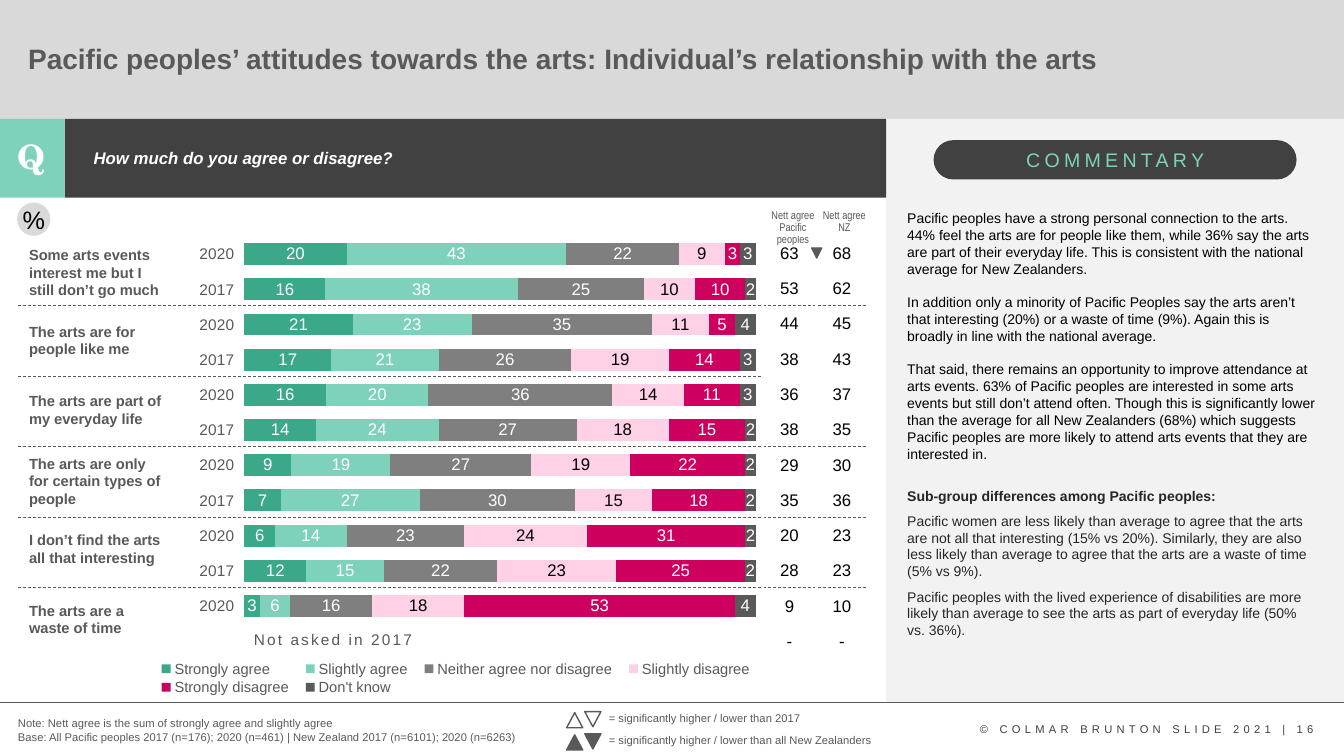
from dataclasses import dataclass
from lxml.etree import SubElement
from pptx import Presentation
from pptx.chart.data import CategoryChartData
from pptx.dml.color import RGBColor
from pptx.enum.chart import XL_CHART_TYPE, XL_LEGEND_POSITION, XL_TICK_MARK
from pptx.enum.dml import MSO_LINE
from pptx.enum.shapes import MSO_CONNECTOR, MSO_SHAPE
from pptx.enum.text import MSO_ANCHOR, PP_ALIGN
from pptx.oxml import parse_xml
from pptx.oxml.ns import nsdecls, qn
from pptx.util import Emu, Pt


@dataclass(frozen=True)
class Theme:
    """Colours, fonts and type sizes of the slide."""
    white: str = "FFFFFF"
    black: str = "000000"
    ink: str = "262626"
    footer: str = "404040"
    dark: str = "414141"
    grey: str = "595959"
    mid: str = "7F7F7F"
    band: str = "D9D9D9"
    panel: str = "F2F2F2"
    green: str = "3AA889"
    mint: str = "7ED2BB"
    pink: str = "FFD1E6"
    magenta: str = "CD005F"
    font: str = "Arial"
    narrow: str = "Arial Narrow"
    serif: str = "TeX Gyre Schola"
    small: float = 8
    body: float = 10
    label: float = 10.5
    axis: float = 11
    value: float = 12
    pill: float = 14
    sign: float = 18
    title: float = 20
    mark: float = 24


T = Theme()
PX = 9144
CENTER = PP_ALIGN.CENTER


def px(n):
    """Turn px into EMU."""
    return Emu(n * PX)


def style(font, size, color, name=T.font):
    """Set the size, colour and typeface of a font."""
    font.size = Pt(size)
    font.name = name
    font.color.rgb = RGBColor.from_string(color)


def write(p, text, size=T.label, color=T.grey, name=T.font, bold=False,
          italic=False, align=None, spc=0, line=None, before=None):
    """Write one formatted run into a paragraph."""
    r = p.add_run()
    r.text = text
    style(r.font, size, color, name)
    r.font.bold, r.font.italic = bold, italic
    if spc:
        r.font._element.set("spc", str(spc))
    if align is not None:
        p.alignment = align
    if line:
        p.line_spacing = line
    if before:
        p.space_before = Pt(before)


def place(parent, index, box, **tags):
    """Give a chart part a manual layout in fractions of the chart."""
    for old in parent.findall(qn("c:layout")):
        parent.remove(old)
    lay = SubElement(parent, qn("c:layout"))
    man = SubElement(lay, qn("c:manualLayout"))
    tags.update(xMode="edge", yMode="edge", **dict(zip("xywh", box)))
    for tag, val in tags.items():
        SubElement(man, qn(f"c:{tag}")).set("val", str(val))
    parent.insert(index, lay)


class Slide:
    """The current slide and its element builders."""

    def __init__(self, prs, theme):
        """Add a blank slide."""
        self.s = prs.slides.add_slide(prs.slide_layouts[6])
        self.t = theme

    def shape(self, x, y, w, h, fill, kind=MSO_SHAPE.RECTANGLE, line=None, turn=0):
        """Add a filled preset shape."""
        sp = self.s.shapes.add_shape(kind, px(x), px(y), px(w), px(h))
        sp.shadow.inherit = False
        sp.fill.solid()
        sp.fill.fore_color.rgb = RGBColor.from_string(fill)
        if line:
            sp.line.color.rgb = RGBColor.from_string(line)
            sp.line.width = Pt(1)
        else:
            sp.line.fill.background()
        sp.rotation = turn
        return sp

    def text(self, x, y, w, h, *paras, wrap=True, anchor=MSO_ANCHOR.TOP, **fmt):
        """Add a text box; a paragraph is a string or a (string, format) pair."""
        tf = self.s.shapes.add_textbox(px(x), px(y), px(w), px(h)).text_frame
        tf.word_wrap = wrap
        tf.vertical_anchor = anchor
        for i, para in enumerate(paras):
            words, extra = (para, {}) if isinstance(para, str) else para
            p = tf.add_paragraph() if i else tf.paragraphs[0]
            write(p, words, **{**fmt, **extra})

    def rule(self, x1, x2, y, dash=False):
        """Add a thin horizontal line."""
        c = self.s.shapes.add_connector(MSO_CONNECTOR.STRAIGHT, px(x1), px(y), px(x2), px(y))
        c.line.color.rgb = RGBColor.from_string(self.t.grey)
        c.line.width = Pt(0.5)
        if dash:
            c.line.dash_style = MSO_LINE.DASH
        SubElement(c._element.spPr, qn("a:effectLst"))

    def table(self, x, y, col, row, rows):
        """Add a plain table of centred values."""
        n, m = len(rows), len(rows[0])
        tbl = self.s.shapes.add_table(n, m, px(x), px(y), px(col * m), px(row * n)).table
        tbl.first_row = tbl.horz_banding = False
        for i, values in enumerate(rows):
            for j, value in enumerate(values):
                cell = tbl.cell(i, j)
                cell.fill.background()
                cell.vertical_anchor = MSO_ANCHOR.MIDDLE
                write(cell.text_frame.paragraphs[0], value, size=self.t.value,
                      color=self.t.black, align=CENTER)

    def chart(self, x, y, w, h, cats, series, plot_box, legend_box):
        """Add a 100% stacked bar chart."""
        cd = CategoryChartData()
        cd.categories = cats
        for name, _, _, values in series:
            cd.add_series(name, values)
        ch = self.s.shapes.add_chart(XL_CHART_TYPE.BAR_STACKED_100, px(x), px(y),
                                     px(w), px(h), cd).chart
        style(ch.font, self.t.body, self.t.black)
        ch.has_title = False
        ch.has_legend = True
        ch.legend.position = XL_LEGEND_POSITION.BOTTOM
        ch.legend.include_in_layout = False
        style(ch.legend.font, self.t.label, self.t.grey)
        ax = ch.category_axis
        ax.format.line.fill.background()
        ax.major_tick_mark = XL_TICK_MARK.OUTSIDE
        style(ax.tick_labels.font, self.t.axis, self.t.grey)
        ch.value_axis.has_major_gridlines = False
        ch.value_axis.visible = False
        plot = ch.plots[0]
        plot.gap_width, plot.overlap = 60, 100
        for ser, (_, fill, ink, _) in zip(plot.series, series):
            ser.format.fill.solid()
            ser.format.fill.fore_color.rgb = RGBColor.from_string(fill)
            ser.data_labels.show_value = True
            style(ser.data_labels.font, self.t.value, ink)
        root = ch._chartSpace.find(qn("c:chart"))
        root.addnext(parse_xml(f'<c:spPr {nsdecls("c", "a")}><a:noFill/>'
                               '<a:ln><a:noFill/></a:ln></c:spPr>'))
        place(root.find(qn("c:plotArea")), 0, plot_box, layoutTarget="inner")
        place(root.find(qn("c:legend")), 1, legend_box)


SERIES = [
    ("Strongly agree", T.green, T.white, [None, 3, 12, 6, 7, 9, 14, 16, 17, 21, 16, 20]),
    ("Slightly agree", T.mint, T.white, [None, 6, 15, 14, 27, 19, 24, 20, 21, 23, 38, 43]),
    ("Neither agree nor disagree", T.mid, T.white,
     [None, 16, 22, 23, 30, 27, 27, 36, 26, 35, 25, 22]),
    ("Slightly disagree", T.pink, T.black, [None, 18, 23, 24, 15, 19, 18, 14, 19, 11, 10, 9]),
    ("Strongly disagree", T.magenta, T.white, [None, 53, 25, 31, 18, 22, 15, 11, 14, 5, 10, 3]),
    ("Don't know", T.grey, T.white, [None, 4, 2, 2, 2, 2, 2, 3, 3, 4, 2, 3]),
]
STATEMENTS = [
    (239, "Some arts events interest me but I still don’t go much"),
    (315, "The arts are for people like me"),
    (384, "The arts are part of my everyday life"),
    (446, "The arts are only for certain types of people"),
    (522, "I don’t find the arts all that interesting"),
    (592, "The arts are a waste of time"),
]
NETT = list(zip("63 53 44 38 36 38 29 35 20 28 9 -".split(),
                "68 62 45 43 37 35 30 36 23 23 10 -".split()))
SUB = dict(color=T.ink, before=6)
COMMENTARY = [
    "Pacific peoples have a strong personal connection to the arts. 44% feel the arts are for people like them, while 36% say the arts are part of their everyday life. This is consistent with the national average for New Zealanders.",
    ("In addition only a minority of Pacific Peoples say the arts aren’t that interesting (20%) or a waste of time (9%). Again this is broadly in line with the national average.", dict(before=12)),
    ("That said, there remains an opportunity to improve attendance at arts events. 63% of Pacific peoples are interested in some arts events but still don’t attend often. Though this is significantly lower than the average for all New Zealanders (68%) which suggests Pacific peoples are more likely to attend arts events that they are interested in.", dict(before=12)),
    ("Sub-group differences among Pacific peoples:", dict(color=T.ink, bold=True, before=18)),
    ("Pacific women are less likely than average to agree that the arts are not all that interesting (15% vs 20%). Similarly, they are also less likely than average to agree that the arts are a waste of time (5% vs 9%).", SUB),
    ("Pacific peoples with the lived experience of disabilities are more likely than average to see the arts as part of everyday life (50% vs. 36%).", SUB),
]


def main():
    """Build and save the slide."""
    prs = Presentation()
    prs.slide_width, prs.slide_height = px(1333), px(750)
    s = Slide(prs, T)
    for box in [(0, 0, 1333, 118, T.band), (879, 118, 454, 579, T.panel),
                (64, 118, 815, 78, T.dark), (0, 118, 64, 78, T.mint)]:
        s.shape(*box)
    s.rule(0, 1333, 697)
    s.text(962, 712, 361, 24, "© COLMAR BRUNTON SLIDE 2021 | 16",
           size=T.small, color=T.footer, spc=300)
    s.text(8, 130, 47, 50, "Q", size=T.mark, color=T.white, name=T.serif,
           bold=True, align=CENTER)
    s.shape(926, 139, 360, 39, T.dark, MSO_SHAPE.ROUNDED_RECTANGLE).adjustments[0] = 0.5
    s.text(1008, 142, 202, 34, "COMMENTARY", wrap=False, size=T.pill, color=T.mint, spc=300)
    s.text(18, 21, 1119, 78, "Pacific peoples’ attitudes towards the arts: Individual’s relationship with the arts",
           anchor=MSO_ANCHOR.MIDDLE, size=T.title, bold=True, line=0.9)
    s.text(83, 144, 760, 46, "How much do you agree or disagree?", size=T.value,
           color=T.white, bold=True, italic=True, line=0.9)
    head = dict(size=T.small, name=T.narrow, align=CENTER, line=0.9)
    s.text(752, 203, 69, 46, "Nett agree Pacific peoples", **head)
    s.text(803, 203, 69, 34, "Nett agree", "NZ", **head)
    s.chart(136, 164, 626, 544, [""] + ["2020", "2017"] * 5 + ["2020"], SERIES,
            (0.17, 0.13, 0.81, 0.77), (0.02, 0.9, 0.97, 0.07))
    for y, words in STATEMENTS:
        s.text(19, y, 154, 47, words, bold=True)
    for i in range(5):
        s.rule(18, 859, 303 + 70 * i, dash=True)
    s.text(242, 620, 276, 29, "Not asked in 2017", size=T.axis, spc=150)
    s.table(757, 234, 52, 35, NETT)
    tf = s.shape(17, 201, 33, 33, T.band, MSO_SHAPE.OVAL).text_frame
    tf.margin_left = tf.margin_right = tf.margin_top = tf.margin_bottom = 0
    tf.vertical_anchor = MSO_ANCHOR.MIDDLE
    tf.word_wrap = False
    write(tf.paragraphs[0], "%", size=T.sign, color=T.black, align=CENTER)
    s.text(8, 706, 536, 37, "Note: Nett agree is the sum of strongly agree and slightly agree",
           "Base: All Pacific peoples 2017 (n=176); 2020 (n=461) | New Zealand 2017 (n=6101); 2020 (n=6263)",
           size=T.small)
    up = MSO_SHAPE.ISOSCELES_TRIANGLE
    for y, w, fill, group in [(701, 213, T.white, "2017"),
                              (723, 284, T.grey, "all New Zealanders")]:
        s.text(594, y, w, 24, f"= significantly higher / lower than {group}",
               wrap=False, size=T.small)
        s.shape(562, y + 6, 16, 15, fill, up, T.grey)
        s.shape(580, y + 5, 16, 15, fill, up, T.grey, turn=180)
    s.shape(805, 246, 10, 10, T.grey, up, T.grey, turn=180)
    s.text(890, 203, 426, 478, *COMMENTARY, size=T.body, color=T.black)
    prs.save("out.pptx")


if __name__ == "__main__":
    main()
